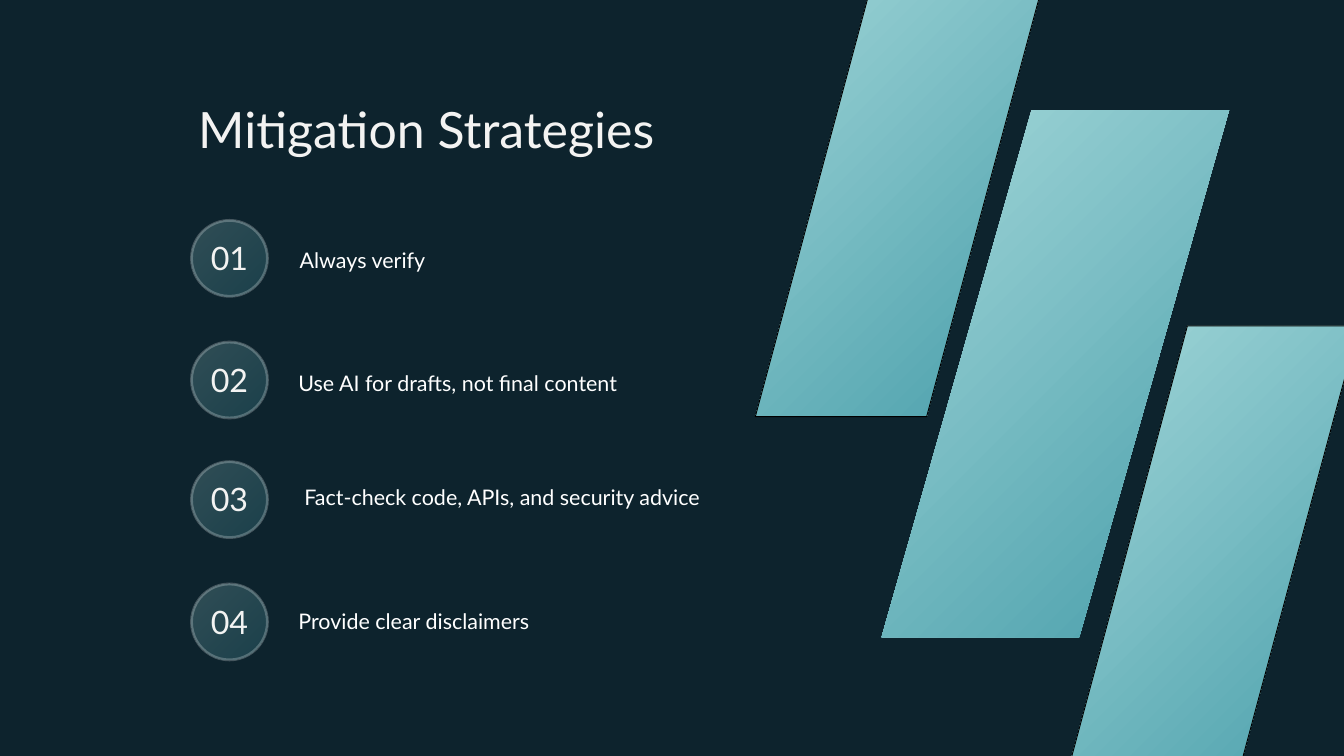
"""Builds the Mitigation Strategies slide: title, four numbered items, slanted bars."""
from lxml import etree
from pptx import Presentation
from pptx import util as u
from pptx.dml.color import RGBColor
from pptx.enum import shapes, text
from pptx.oxml.ns import qn

PX = 9144
FONT = "Lato"
BACKGROUND, OFF_WHITE, WHITE, BLACK = "0D232D", "F3F3F2", "FFFFFF", "000000"
TEAL_LIGHT, TEAL_DARK = "A3D7D8", "489EAB"

BADGE_LEFT, BADGE_SIZE = 285, 113
BARS = [
    (1312, 164, 517, 784, 223, False),
    (1124, -91, 446, 711, 191, True),
    (1576, 485, 446, 711, 191, True),
]
STRATEGIES = [
    ("Always verify", 328, 446, 361),
    ("Use AI for drafts, not final content", 509, 444, 544),
    ("Fact-check code, APIs, and security advice", 687, 453, 714),
    ("Provide clear disclaimers", 869, 444, 899),
]


def colour(value):
    return RGBColor.from_string(value)


def px(*lengths):
    return [u.Emu(length * PX) for length in lengths]


def fill_teal(shape):
    shape.shadow.inherit = False
    shape.fill.gradient()
    shape.fill.gradient_angle = 315
    for stop, shade in zip(shape.fill.gradient_stops, (TEAL_LIGHT, TEAL_DARK)):
        stop.color.rgb = colour(shade)


def outline(shape, shade, points):
    shape.line.color.rgb = colour(shade)
    shape.line.width = u.Pt(points)


def set_opacity(shape, percent):
    for shade in shape._element.spPr.iter(qn("a:srgbClr")):
        etree.SubElement(shade, qn("a:alpha")).set("val", str(percent * 1000))


def write(shape, words, size, leading, shade, align=text.PP_ALIGN.LEFT,
          anchor=text.MSO_ANCHOR.TOP, wrap=True):
    frame = shape.text_frame
    frame.text = words
    frame.word_wrap = wrap
    frame.auto_size = text.MSO_AUTO_SIZE.NONE
    frame.vertical_anchor = anchor
    frame.margin_left = frame.margin_top = frame.margin_right = frame.margin_bottom = 0
    paragraph = frame.paragraphs[0]
    paragraph.alignment = align
    paragraph.line_spacing = u.Pt(leading)
    font = paragraph.runs[0].font
    font.name, font.size, font.color.rgb = FONT, u.Pt(size), colour(shade)


def add_title(slide, words):
    title = slide.shapes.title
    title.left, title.top, title.width, title.height = px(295, 150, 1031, 87)
    write(title, words, 53.6, 62.1, OFF_WHITE)


def add_bar(slide, left, top, width, height, slant, outlined):
    bar = slide.shapes.add_shape(
        shapes.MSO_SHAPE.PARALLELOGRAM, *px(left, top, width, height))
    bar.adjustments[0] = slant / width
    fill_teal(bar)
    if outlined:
        outline(bar, BLACK, 1)
    else:
        bar.line.fill.background()


def add_badge(slide, number, top):
    badge = slide.shapes.add_shape(
        shapes.MSO_SHAPE.OVAL, *px(BADGE_LEFT, top, BADGE_SIZE, BADGE_SIZE))
    fill_teal(badge)
    outline(badge, WHITE, 3)
    set_opacity(badge, 24)
    write(badge, f"{number:02d}", 34.5, 40, OFF_WHITE,
          text.PP_ALIGN.CENTER, text.MSO_ANCHOR.MIDDLE, wrap=False)


def add_strategy(slide, words, left, top):
    strategy = slide.shapes.add_textbox(*px(left, top, 700, 40))
    write(strategy, words, 23, 32.2, WHITE)


def main():
    deck = Presentation()
    deck.slide_width, deck.slide_height = px(2000, 1125)
    slide = deck.slides.add_slide(deck.slide_layouts[5])
    slide.background.fill.solid()
    slide.background.fill.fore_color.rgb = colour(BACKGROUND)
    for bar in BARS:
        add_bar(slide, *bar)
    add_title(slide, "Mitigation Strategies")
    for number, (words, badge_top, left, top) in enumerate(STRATEGIES, 1):
        add_badge(slide, number, badge_top)
        add_strategy(slide, words, left, top)
    deck.save("out.pptx")


if __name__ == "__main__":
    main()
